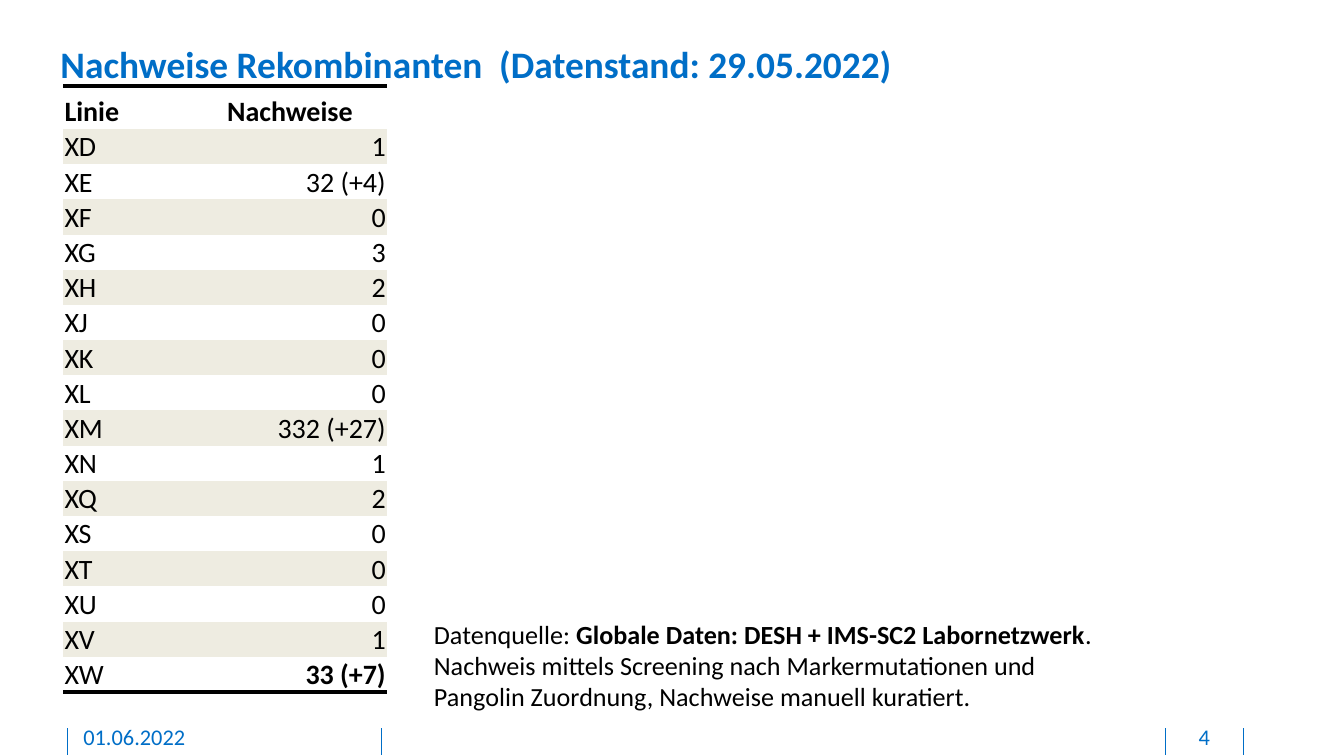
import pptx
import pptx.util
import pptx.dml.color
import pptx.enum.shapes
import pptx.enum.text
import pptx.oxml
import pptx.oxml.ns
import lxml.etree

Inches = pptx.util.Inches
Pt = pptx.util.Pt
Align = pptx.enum.text.PP_ALIGN
Anchor = pptx.enum.text.MSO_ANCHOR
qn = pptx.oxml.ns.qn

HUES = {"blue": "006EC7", "ink": "000000", "band": "EEECE1", "plain": "FFFFFF"}
NO_STYLE = "{2D5ABB26-0587-4C30-8999-92F81FD0307C}"

COUNTS = [
    ("XD", "1"), ("XE", "32 (+4)"), ("XF", "0"), ("XG", "3"),
    ("XH", "2"), ("XJ", "0"), ("XK", "0"), ("XL", "0"),
    ("XM", "332 (+27)"), ("XN", "1"), ("XQ", "2"), ("XS", "0"),
    ("XT", "0"), ("XU", "0"), ("XV", "1"), ("XW", "33 (+7)"),
]
NOTE = [
    [("Datenquelle: ", False),
     ("Globale Daten: DESH + IMS-SC2 Labornetzwerk", True), (".", False)],
    [("Nachweis mittels Screening nach Markermutationen und", False)],
    [("Pangolin Zuordnung, Nachweise manuell kuratiert.", False)],
]


def rgb(hue):
    return pptx.dml.color.RGBColor.from_string(HUES[hue])


def add_run(para, text, size, hue="ink", bold=False):
    run = para.add_run()
    run.text = text
    font = run.font
    font.name, font.size, font.bold = "Calibri", Pt(size), bold
    font.color.rgb = rgb(hue)


def place(shape, x, y, w, h):
    shape.left, shape.top = Inches(x), Inches(y)
    shape.width, shape.height = Inches(w), Inches(h)


def add_title(slide, x, y, w, h):
    title = slide.shapes.title
    place(title, x, y, w, h)
    frame = title.text_frame
    frame.auto_size = pptx.enum.text.MSO_AUTO_SIZE.NONE
    frame.vertical_anchor = Anchor.TOP
    para = frame.paragraphs[0]
    para.alignment = Align.LEFT
    add_run(para, "Nachweise Rekombinanten  (Datenstand: 29.05.2022)", 20, "blue", True)


def add_rule(cell, tag):
    """Draw a black 2 pt border on one side of a cell."""
    side = pptx.oxml.parse_xml(
        f'<a:{tag} xmlns:a="http://schemas.openxmlformats.org/drawingml/2006/main" '
        f'w="{Pt(2)}"><a:solidFill><a:srgbClr val="{HUES["ink"]}"/></a:solidFill></a:{tag}>')
    cell._tc.get_or_add_tcPr().insert(0, side)


def add_counts(slide, x, y, w, h):
    rows = [("Linie", "Nachweise")] + COUNTS
    last = len(rows) - 1
    head = 0.32
    table = slide.shapes.add_table(
        len(rows), 2, Inches(x), Inches(y), Inches(w), Inches(h)).table
    table.first_row = table.horz_banding = False
    table._tbl.tblPr.find(qn("a:tableStyleId")).text = NO_STYLE
    for col, wide in zip(table.columns, (1.21, w - 1.21)):
        col.width = Inches(wide)
    for i, texts in enumerate(rows):
        table.rows[i].height = Inches(head if i == 0 else (h - head) / last)
        for j, text in enumerate(texts):
            cell = table.cell(i, j)
            cell.margin_left = cell.margin_right = cell.margin_top = Inches(0.01)
            cell.margin_bottom = 0
            cell.vertical_anchor = Anchor.BOTTOM
            cell.fill.solid()
            cell.fill.fore_color.rgb = rgb("band" if i % 2 else "plain")
            para = cell.text_frame.paragraphs[0]
            para.alignment = Align.RIGHT if i and j else Align.LEFT
            add_run(para, text, 15, bold=i == 0 or (i == last and j == 1))
            if i == 0:
                add_rule(cell, "lnT")
            elif i == last:
                add_rule(cell, "lnB")


def add_note(slide, x, y, w, h):
    box = slide.shapes.add_textbox(Inches(x), Inches(y), Inches(w), Inches(h))
    frame = box.text_frame
    frame.word_wrap = True
    for i, runs in enumerate(NOTE):
        para = frame.add_paragraph() if i else frame.paragraphs[0]
        for text, bold in runs:
            add_run(para, text, 14, bold=bold)


def add_footer(slide, x, y, w, h):
    # Upright dividers
    for dx in (0, 2.34, 8.17, w):
        line = slide.shapes.add_connector(
            pptx.enum.shapes.MSO_CONNECTOR.STRAIGHT,
            Inches(x + dx), Inches(y + 0.04), Inches(x + dx), Inches(y + h))
        line.line.color.rgb = rgb("blue")
        line.line.width = Pt(0.5)
        lxml.etree.SubElement(line._element.spPr, qn("a:effectLst"))
    # Date and page number
    for dx, wide, text, align in (
            (0.12, 2.03, "01.06.2022", Align.LEFT),
            (8.19, 0.54, "4", Align.CENTER)):
        box = slide.shapes.add_textbox(
            Inches(x + dx), Inches(y), Inches(wide), Inches(0.21))
        frame = box.text_frame
        frame.word_wrap = True
        frame.margin_left = frame.margin_right = frame.margin_top = 0
        para = frame.paragraphs[0]
        para.alignment = align
        add_run(para, text, 12, "blue")


def main():
    deck = pptx.Presentation()
    # Widescreen, 16 to 9
    deck.slide_width = Inches(10)
    deck.slide_height = deck.slide_width * 9 // 16
    slide = deck.slides.add_slide(deck.slide_layouts[5])
    add_footer(slide, 0.5, 5.38, 8.75, 0.24)
    add_title(slide, 0.35, 0.26, 7.9, 0.74)
    add_counts(slide, 0.47, 0.64, 2.41, 4.51)
    add_note(slide, 3.13, 4.55, 5.12, 1.07)
    deck.save("out.pptx")


if __name__ == "__main__":
    main()
